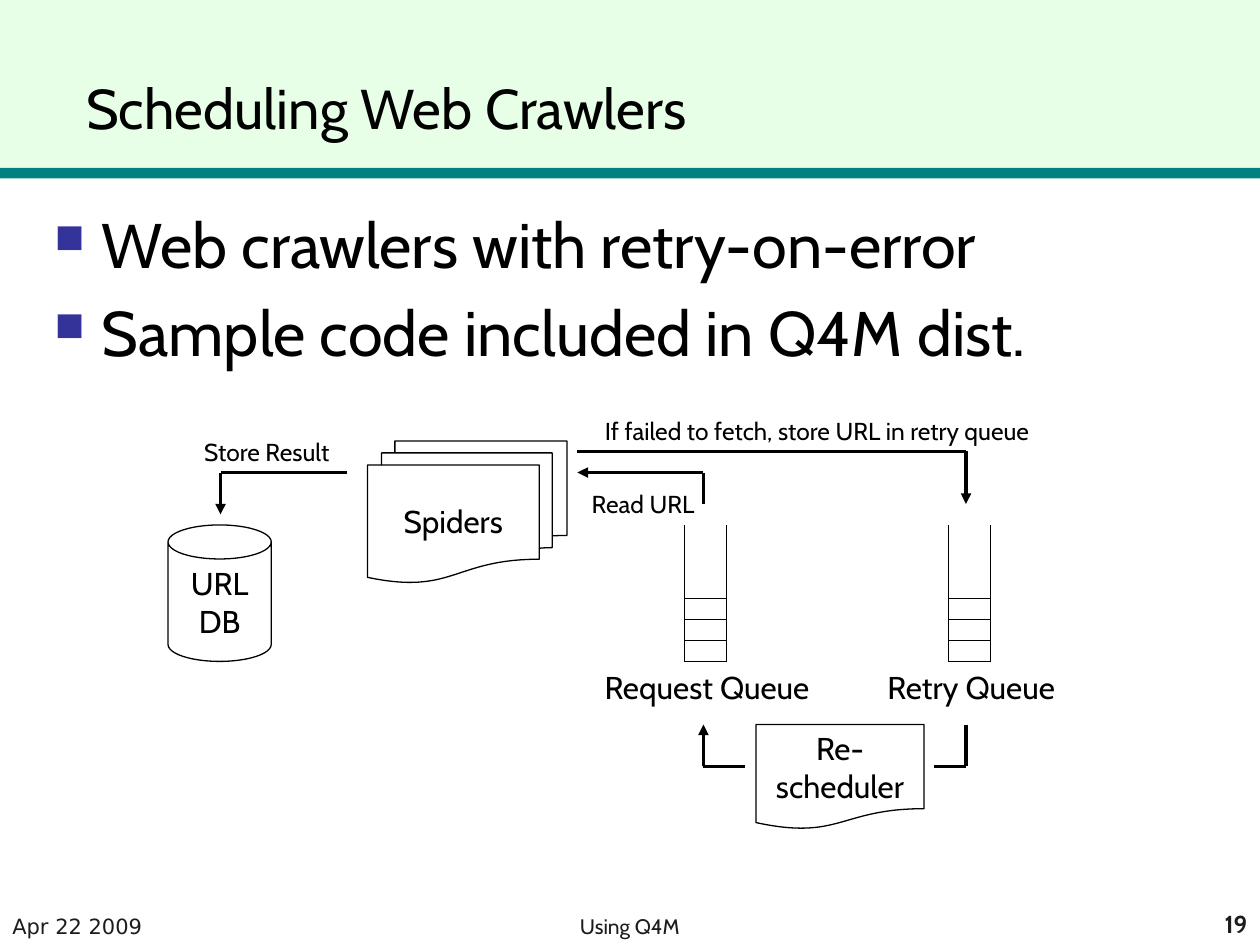
from dataclasses import dataclass
from lxml import etree
from pptx import Presentation
from pptx import util as u
from pptx.dml import color
from pptx.enum import shapes, text
from pptx.oxml import ns

Pt = u.Pt
RGB = color.RGBColor.from_string
Kind = shapes.MSO_SHAPE
Align = text.PP_ALIGN
Anchor = text.MSO_ANCHOR


@dataclass(frozen=True)
class Theme:
    ink: str = "000000"
    paper: str = "FFFFFF"
    header: str = "E7FFE7"
    rule: str = "008080"
    bullet: str = "333399"
    footer: str = "1C1C1C"
    shadow: str = "C0C0C0"
    font: str = "Cabin"
    date_font: str = "DejaVu Sans"
    title: int = 32
    body: int = 36
    label: int = 18
    note: int = 14
    small: int = 12
    outline: float = 0.75
    flow: float = 2


theme = Theme()


def write(shape, lines, size, align=Align.CENTER, anchor=Anchor.TOP, wrap=False,
          ink=theme.ink, font=theme.font, bold=False):
    frame = shape.text_frame
    frame.word_wrap = wrap
    frame.vertical_anchor = anchor
    for index, line in enumerate(lines):
        paragraph = frame.paragraphs[0] if index == 0 else frame.add_paragraph()
        paragraph.alignment = align
        run = paragraph.add_run()
        run.text = line
        run.font.size = Pt(size)
        run.font.name = font
        run.font.bold = bold
        run.font.color.rgb = RGB(ink)
    return frame


def draw_line(owner, points, width, arrow=False):
    for start, end in zip(points, points[1:]):
        line = owner.add_connector(shapes.MSO_CONNECTOR.STRAIGHT, *map(Pt, start + end))
        line.line.color.rgb = RGB(theme.ink)
        line.line.width = Pt(width)
        properties = line._element.spPr
        etree.SubElement(properties, ns.qn("a:effectLst"))
        if arrow and end == points[-1]:
            outline = properties.find(ns.qn("a:ln"))
            etree.SubElement(outline, ns.qn("a:tailEnd"), type="triangle")


deck = Presentation()
deck.slide_width, deck.slide_height = Pt(720), Pt(540)
slide = deck.slides.add_slide(deck.slide_layouts[5])
canvas = slide.shapes

for top, height, fill in ((0, 96, theme.header), (96, 6, theme.rule)):
    band = canvas.add_shape(Kind.RECTANGLE, 0, Pt(top), Pt(720), Pt(height))
    band.shadow.inherit = False
    band.fill.solid()
    band.fill.fore_color.rgb = RGB(fill)
    band.line.fill.background()

heading = canvas.title
canvas._spTree.append(heading._element)
heading.left, heading.top, heading.width, heading.height = map(Pt, (42, 0, 678, 84))
heading_frame = write(heading, ["Scheduling Web Crawlers"], theme.title, Align.LEFT,
                      Anchor.BOTTOM, True)
heading_fill = heading_frame.paragraphs[0].runs[0]._r.rPr.find(ns.qn("a:solidFill"))
effects = etree.Element(ns.qn("a:effectLst"))
heading_fill.addnext(effects)
shadow = etree.SubElement(effects, ns.qn("a:outerShdw"), blurRad="38100",
                          dist="38100", dir="2700000")
etree.SubElement(shadow, ns.qn("a:srgbClr"), val=theme.shadow)

footers = (
    (0, 150, "Apr 22 2009", Align.LEFT, theme.small, theme.date_font, False),
    (72, 576, "Using Q4M", Align.CENTER, theme.small, theme.font, False),
    (570, 150, "19", Align.RIGHT, theme.note, theme.font, True),
)
for left, width, words, align, size, font, bold in footers:
    footer = canvas.add_textbox(Pt(left), Pt(516), Pt(width), Pt(24))
    write(footer, [words], size, align, Anchor.BOTTOM, True, theme.footer, font, bold)

points = canvas.add_textbox(Pt(24), Pt(114), Pt(696), Pt(120))
points_frame = write(points, ["Web crawlers with retry-on-error",
                              "Sample code included in Q4M dist."],
                     theme.body, Align.LEFT, wrap=True)
for index, paragraph in enumerate(points_frame.paragraphs):
    if index:
        paragraph.space_before = Pt(7)
    properties = paragraph._p.get_or_add_pPr()
    properties.set("marL", str(Pt(27)))
    properties.set("indent", str(Pt(-27)))
    bullet_color = etree.SubElement(properties, ns.qn("a:buClr"))
    etree.SubElement(bullet_color, ns.qn("a:srgbClr"), val=theme.bullet)
    etree.SubElement(properties, ns.qn("a:buSzPct"), val="65000")
    etree.SubElement(properties, ns.qn("a:buChar"), char="■")

nodes = (
    (Kind.CAN, 96, 300, 59, 78, ["URL", "DB"]),
    (Kind.FLOWCHART_MULTIDOCUMENT, 210, 252, 114, 81, ["Spiders"]),
    (Kind.FLOWCHART_DOCUMENT, 432, 414, 96, 60, ["Re-", "scheduler"]),
)
for kind, left, top, width, height, lines in nodes:
    node = canvas.add_shape(kind, Pt(left), Pt(top), Pt(width), Pt(height))
    node.shadow.inherit = False
    node.fill.solid()
    node.fill.fore_color.rgb = RGB(theme.paper)
    node.line.color.rgb = RGB(theme.ink)
    node.line.width = Pt(theme.outline)
    if kind == Kind.CAN:
        node.adjustments[0] = 0.33
    write(node, lines, theme.label, anchor=Anchor.MIDDLE)

for left, name, label_left, label_width in (
        (391, "Request Queue", 336, 136), (542, "Retry Queue", 498, 114)):
    right = left + 24
    queue = canvas.add_group_shape().shapes
    draw_line(queue, [(left, 300), (left, 378), (right, 378), (right, 300)], theme.outline)
    for slot in range(1, 4):
        level = 378 - 12 * slot
        draw_line(queue, [(left, level), (right, level)], theme.outline)
    queue_label = queue.add_textbox(Pt(label_left), Pt(378), Pt(label_width), Pt(29))
    write(queue_label, [name], theme.label)

flows = (
    ([(402, 288), (402, 270), (330, 270)], True),
    ([(330, 258), (552, 258), (552, 288)], True),
    ([(198, 270), (126, 270), (126, 294)], True),
    ([(552, 414), (552, 438), (534, 438)], False),
    ([(426, 438), (402, 438), (402, 414)], True),
)
for route, arrow in flows:
    draw_line(canvas, route, theme.flow, arrow)

notes = (
    (108, 246, 89, "Store Result"),
    (330, 276, 75, "Read URL"),
    (330, 234, 274, "If failed to fetch, store URL in retry queue"),
)
for left, top, width, words in notes:
    note = canvas.add_textbox(Pt(left), Pt(top), Pt(width), Pt(24))
    write(note, [words], theme.note)

deck.save("out.pptx")
